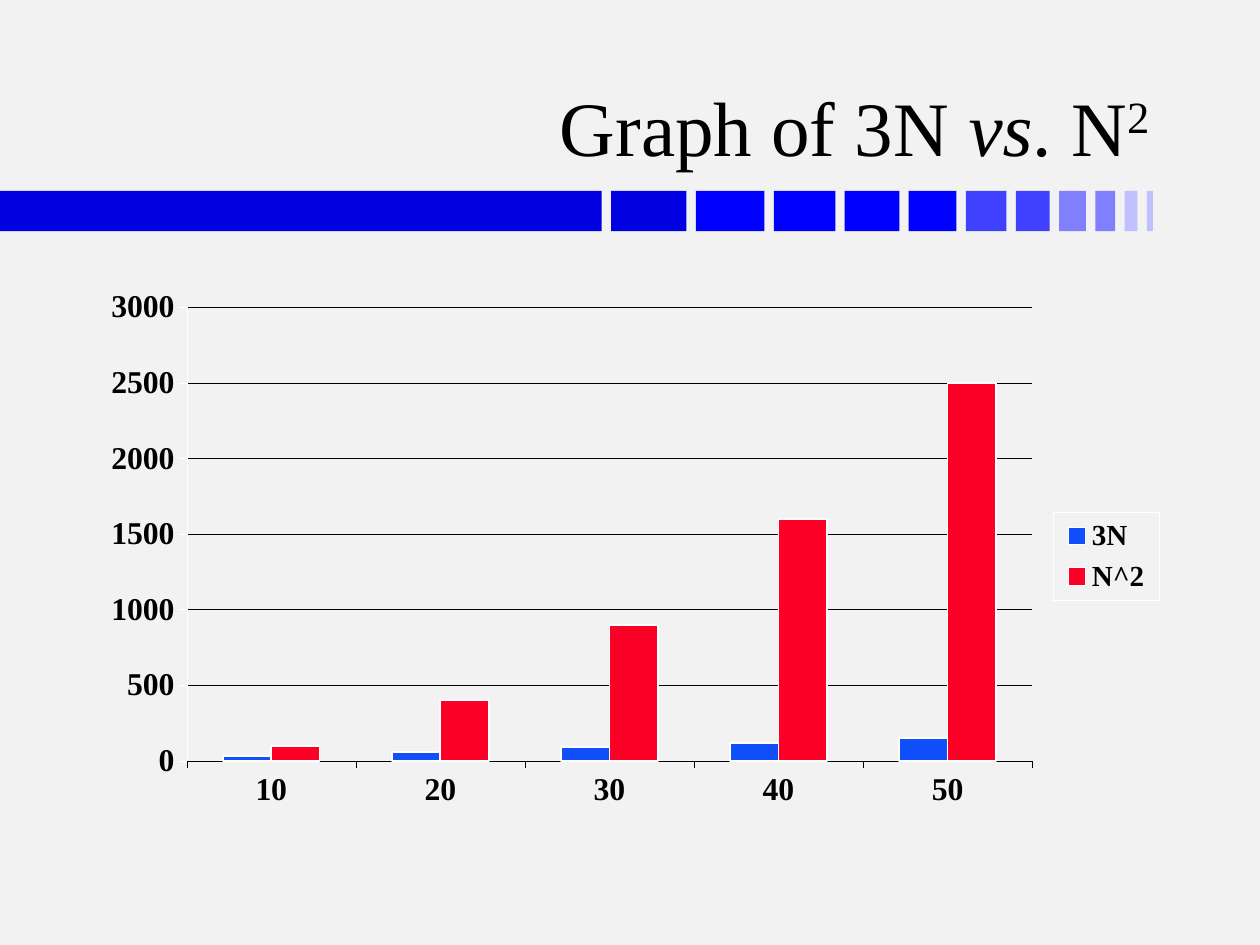
"""Build a slide that charts 3N against N squared."""
from typing import NamedTuple

from lxml import etree
from pptx import Presentation
from pptx import util as u
from pptx.chart import data as cd
from pptx.dml import color
from pptx.enum import chart as ec
from pptx.enum import shapes, text
from pptx.oxml import ns

FONT = "Times New Roman"
BLACK, WHITE = "000000", "FFFFFF"


class Block(NamedTuple):
    width: float
    fill: str


class TitleRun(NamedTuple):
    words: str
    italic: bool = False
    raised: bool = False


class Series(NamedTuple):
    name: str
    values: list[int]
    fill: str


BLOCK_FILLS = (["0000E0"] * 2 + ["0000FF"] * 4 + ["4040FF"] * 2
               + ["8080FF"] * 2 + ["C0C0FF"] * 2)
BLOCK_WIDTHS = [12.13] + [1.52 - 0.14 * i for i in range(11)]
BLOCKS = [Block(w, c) for w, c in zip(BLOCK_WIDTHS, BLOCK_FILLS)]
BLOCK_GAP = 0.19

TITLE = [TitleRun("Graph of 3N "), TitleRun("vs", italic=True),
         TitleRun(". N"), TitleRun("2", raised=True)]

SIZES = [10, 20, 30, 40, 50]
SERIES = [Series("3N", [3 * n for n in SIZES], "114FFB"),
          Series("N^2", [n * n for n in SIZES], "FC0128")]


def rgb(value: str) -> color.RGBColor:
    return color.RGBColor.from_string(value)


def set_fill(fill, value: str) -> None:
    fill.solid()
    fill.fore_color.rgb = rgb(value)


def set_line(line, value: str, width: float) -> None:
    set_fill(line.fill, value)
    line.width = u.Pt(width)


def set_font(font, size: float, bold: bool = False) -> None:
    font.name, font.size, font.bold = FONT, u.Pt(size), bold
    font.color.rgb = rgb(BLACK)


def draw_band(s, blocks: list[Block]) -> None:
    left = 0.0
    for block in blocks:
        sp = s.shapes.add_shape(shapes.MSO_SHAPE.RECTANGLE, u.Cm(left), u.Cm(3.85),
                                u.Cm(block.width), u.Cm(0.81))
        sp.shadow.inherit = False
        set_fill(sp.fill, block.fill)
        sp.line.fill.background()
        left += block.width + BLOCK_GAP


def draw_title(s, runs: list[TitleRun]) -> None:
    tf = s.shapes.add_textbox(u.Cm(1.88), u.Cm(0.48), u.Cm(21.54), u.Cm(3.12)).text_frame
    tf.word_wrap = True
    tf.vertical_anchor = text.MSO_ANCHOR.BOTTOM
    p = tf.paragraphs[0]
    p.alignment = text.PP_ALIGN.RIGHT
    for run in runs:
        r = p.add_run()
        r.text = run.words
        set_font(r.font, 44)
        r.font.italic = run.italic
        if run.raised:
            r._r.get_or_add_rPr().set("baseline", "30000")


def place(parent, index: int, x: float, y: float, w: float, h: float,
          inner: bool = False) -> None:
    for old in parent.findall(ns.qn("c:layout")):
        parent.remove(old)
    layout = etree.Element(ns.qn("c:layout"))
    manual = etree.SubElement(layout, ns.qn("c:manualLayout"))
    settings = {"layoutTarget": "inner"} if inner else {}
    settings |= {"xMode": "edge", "yMode": "edge", "x": x, "y": y, "w": w, "h": h}
    for tag, value in settings.items():
        etree.SubElement(manual, ns.qn(f"c:{tag}")).set("val", str(value))
    parent.insert(index, layout)


def outline_legend(legend, value: str) -> None:
    sp_pr = etree.Element(ns.qn("c:spPr"))
    etree.SubElement(sp_pr, ns.qn("a:noFill"))
    line = etree.SubElement(sp_pr, ns.qn("a:ln"), w=str(u.Pt(0.25)))
    fill = etree.SubElement(line, ns.qn("a:solidFill"))
    etree.SubElement(fill, ns.qn("a:srgbClr"), val=value)
    legend.find(ns.qn("c:overlay")).addnext(sp_pr)


def style_axis(axis, line: str) -> None:
    axis.major_tick_mark = ec.XL_TICK_MARK.OUTSIDE
    axis.minor_tick_mark = ec.XL_TICK_MARK.NONE
    set_font(axis.tick_labels.font, 18.1, bold=True)
    set_line(axis.format.line, line, 0.25)


def draw_chart(s, series: list[Series]) -> None:
    data = cd.CategoryChartData()
    data.categories = [str(n) for n in SIZES]
    for item in series:
        data.add_series(item.name, item.values)
    chart = s.shapes.add_chart(ec.XL_CHART_TYPE.COLUMN_CLUSTERED, u.Cm(2.06), u.Cm(5.64),
                               u.Cm(21.31), u.Cm(11.15), data).chart
    chart.has_title = False
    set_font(chart.font, 18.1, bold=True)

    plot = chart.plots[0]
    plot.gap_width, plot.overlap, plot.vary_by_categories = 150, 0, False
    for column, item in zip(plot.series, series):
        set_fill(column.format.fill, item.fill)
        set_line(column.format.line, WHITE, 1)

    style_axis(chart.category_axis, BLACK)
    chart.category_axis.tick_label_position = ec.XL_TICK_LABEL_POSITION.LOW
    values = chart.value_axis
    style_axis(values, WHITE)
    values.minimum_scale, values.maximum_scale, values.major_unit = 0, 3000, 500
    set_line(values.major_gridlines.format.line, BLACK, 0.25)

    chart.has_legend = True
    chart.legend.position = ec.XL_LEGEND_POSITION.RIGHT
    chart.legend.include_in_layout = False
    set_font(chart.legend.font, 16.6, bold=True)
    legend = chart.legend._element
    outline_legend(legend, WHITE)
    place(legend, 1, 0.9, 0.42, 0.1, 0.16)
    place(chart._chartSpace.chart.plotArea, 0, 0.08, 0.05, 0.8, 0.82, inner=True)


def main() -> None:
    prs = Presentation()
    prs.slide_width, prs.slide_height = u.Cm(25.4), u.Cm(19.05)
    s = prs.slides.add_slide(prs.slide_layouts[6])
    set_fill(s.background.fill, "F2F2F2")
    draw_band(s, BLOCKS)
    draw_title(s, TITLE)
    draw_chart(s, SERIES)
    prs.save("out.pptx")


if __name__ == "__main__":
    main()
